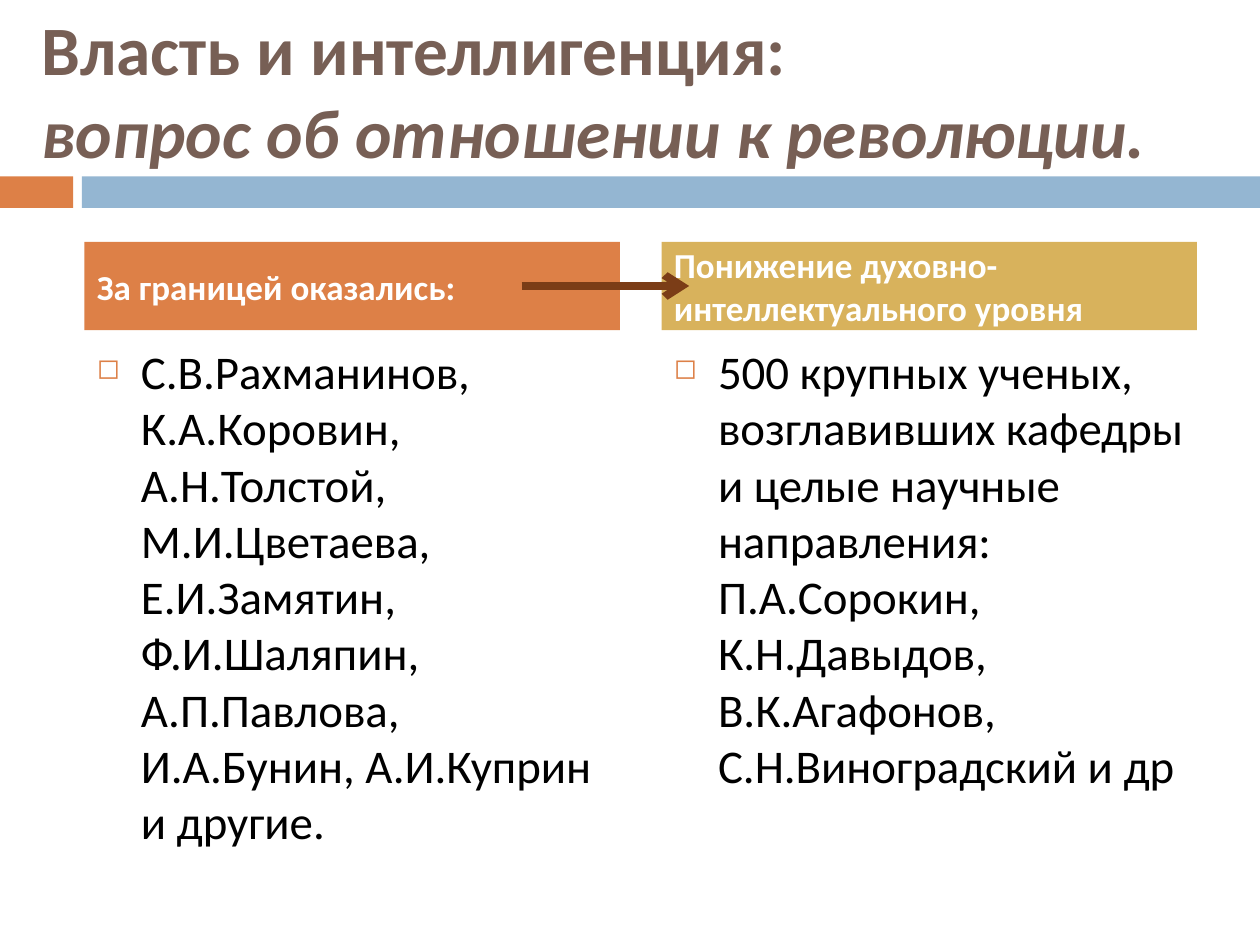
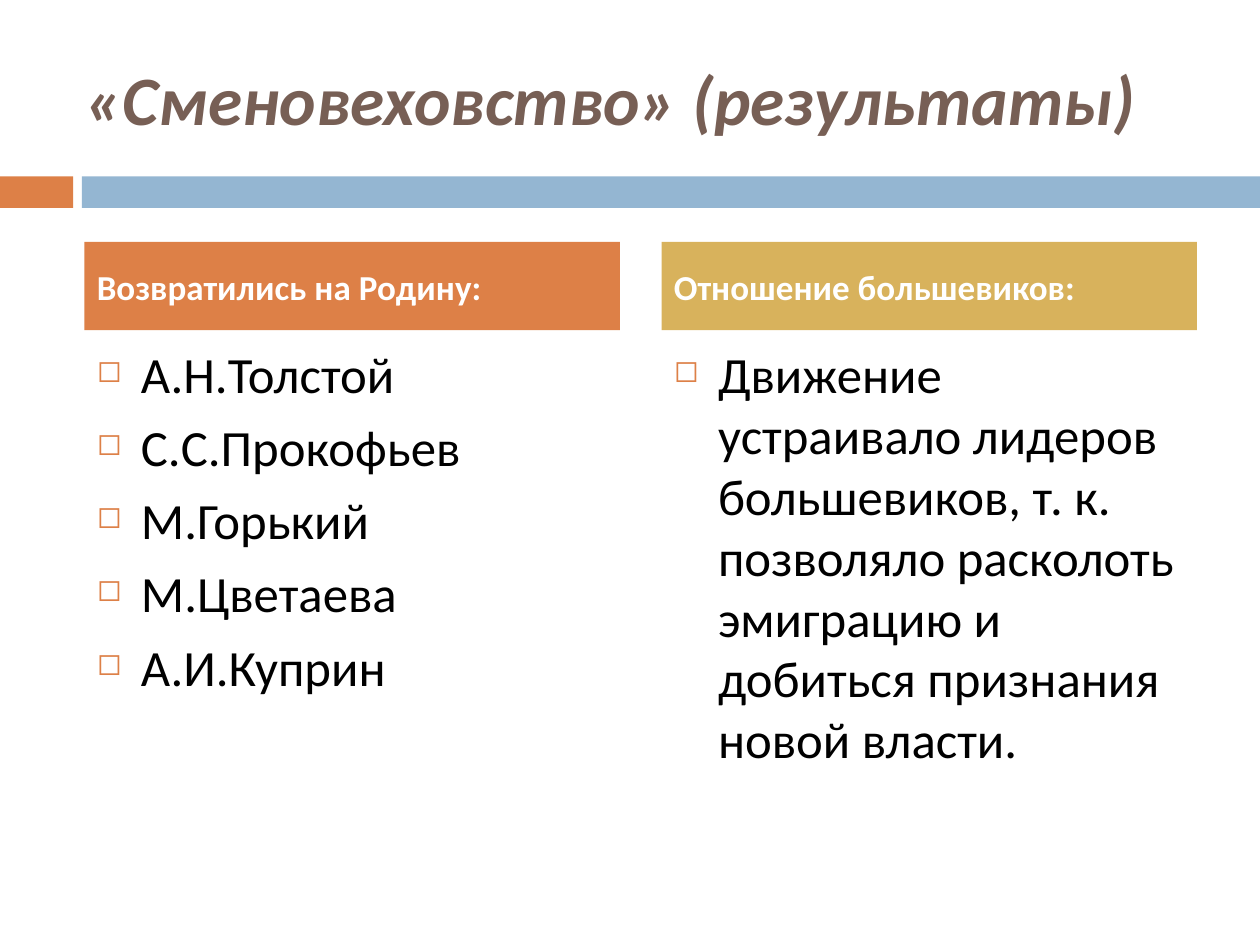
from dataclasses import dataclass
from lxml import etree
from pptx import Presentation
from pptx import util as u
from pptx.dml.color import RGBColor
from pptx.enum import shapes, text
from pptx.oxml import ns

# Content: title place, title lines (words, italic), columns, body size
SLIDES = [
    dict(
        place=(0.23, 0.16, 9.27, 1.09),
        title=[("Власть и интеллигенция:", False),
               ("вопрос об отношении к революции.", True)],
        heads=["За границей оказались:",
               "Понижение духовно-интеллектуального уровня"],
        lists=[["С.В.Рахманинов, К.А.Коровин, А.Н.Толстой, М.И.Цветаева, "
                "Е.И.Замятин, Ф.И.Шаляпин, А.П.Павлова, И.А.Бунин, "
                "А.И.Куприн и другие."],
               ["500 крупных ученых, возглавивших кафедры и целые научные "
                "направления: П.А.Сорокин, К.Н.Давыдов, В.К.Агафонов, "
                "С.Н.Виноградский и др"]],
        size=26.8,
        arrow=(4.14, 5.47, 2.27),
    ),
    dict(
        place=(0.58, 0.3, 8.92, 0.95),
        title=[("«Сменовеховство» (результаты)", True)],
        heads=["Возвратились на Родину:", "Отношение большевиков:"],
        lists=[["А.Н.Толстой", "С.С.Прокофьев", "М.Горький", "М.Цветаева",
                "А.И.Куприн"],
               ["Движение устраивало лидеров большевиков, т. к. позволяло "
                "расколоть эмиграцию и добиться признания новой власти."]],
        size=29,
        arrow=None,
    ),
]


@dataclass(frozen=True)
class Theme:
    font: str = "Calibri"
    title: str = "775F55"
    body: str = "000000"
    white: str = "FFFFFF"
    orange: str = "DD8047"
    blue: str = "94B6D2"
    gold: str = "D8B25C"
    arrow: str = "7B3D17"
    title_size: float = 39.6
    head_size: float = 20
    before: float = 7
    indent: float = 0.35


T = Theme()
BANDS = [(0, 0.58, T.orange), (0.65, 9.35, T.blue)]
FILLS = [T.orange, T.gold]
LEFT, WIDE, STEP = 0.67, 4.25, 4.58


def add_tag(parent, tag, **attrs):
    return etree.SubElement(parent, ns.qn(tag), attrs)


def add_box(slide, place, fill):
    box = slide.shapes.add_shape(shapes.MSO_SHAPE.RECTANGLE,
                                 *map(u.Inches, place))
    box.shadow.inherit = False
    box.fill.solid()
    box.fill.fore_color.rgb = RGBColor.from_string(fill)
    box.line.fill.background()
    return box


def set_frame(shape, anchor):
    frame = shape.text_frame
    frame.word_wrap = True
    frame.auto_size = text.MSO_AUTO_SIZE.NONE
    frame.vertical_anchor = anchor
    return frame


def add_run(para, words, size, color, bold=False, italic=False):
    run = para.add_run()
    run.text = words
    font = run.font
    font.name, font.size = T.font, u.Pt(size)
    font.bold, font.italic = bold, italic
    font.color.rgb = RGBColor.from_string(color)


def add_bullet(para):
    props = para._p.get_or_add_pPr()
    indent = u.Inches(T.indent)
    props.set("marL", str(indent))
    props.set("indent", str(-indent))
    add_tag(add_tag(props, "a:buClr"), "a:srgbClr", val=T.orange)
    add_tag(props, "a:buSzPct", val="60000")
    add_tag(props, "a:buChar", char="◻")


def add_title(slide, place, lines):
    box = slide.shapes.add_textbox(*map(u.Inches, place))
    para = set_frame(box, text.MSO_ANCHOR.MIDDLE).paragraphs[0]
    for n, (words, italic) in enumerate(lines):
        if n:
            para.add_line_break()
        add_run(para, words, T.title_size, T.title, True, italic)


def add_list(slide, left, items, size):
    place = left, 2.67, WIDE, 3.92
    box = slide.shapes.add_textbox(*map(u.Inches, place))
    frame = set_frame(box, text.MSO_ANCHOR.TOP)
    for n, words in enumerate(items):
        para = frame.add_paragraph() if n else frame.paragraphs[0]
        para.space_before = u.Pt(T.before)
        add_bullet(para)
        add_run(para, words, size, T.body)


def add_head(slide, left, words, fill):
    box = add_box(slide, (left, 1.92, WIDE, 0.7), fill)
    para = set_frame(box, text.MSO_ANCHOR.MIDDLE).paragraphs[0]
    para.alignment = text.PP_ALIGN.LEFT
    para.space_before = u.Pt(T.before)
    add_run(para, words, T.head_size, T.white, True)


def add_arrow(slide, start, end, top):
    line = slide.shapes.add_connector(
        shapes.MSO_CONNECTOR.STRAIGHT,
        *map(u.Inches, (start, top, end, top)))
    line.line.width = u.Pt(4.5)
    line.line.color.rgb = RGBColor.from_string(T.arrow)
    add_tag(line.line._get_or_add_ln(), "a:tailEnd", type="arrow")
    add_tag(line._element.spPr, "a:effectLst")


def build(deck, data):
    slide = deck.slides.add_slide(deck.slide_layouts[6])
    # Bands and title
    for left, wide, fill in BANDS:
        add_box(slide, (left, 1.4, wide, 0.25), fill)
    add_title(slide, data["place"], data["title"])
    # Two columns
    for n, (head, items) in enumerate(zip(data["heads"], data["lists"])):
        left = LEFT + n * STEP
        add_list(slide, left, items, data["size"])
        add_head(slide, left, head, FILLS[n])
    # Arrow between the headings
    if data["arrow"]:
        add_arrow(slide, *data["arrow"])


def main():
    deck = Presentation()
    deck.slide_width, deck.slide_height = u.Inches(10), u.Inches(7.5)
    for data in SLIDES:
        build(deck, data)
    deck.save("out.pptx")


if __name__ == "__main__":
    main()
